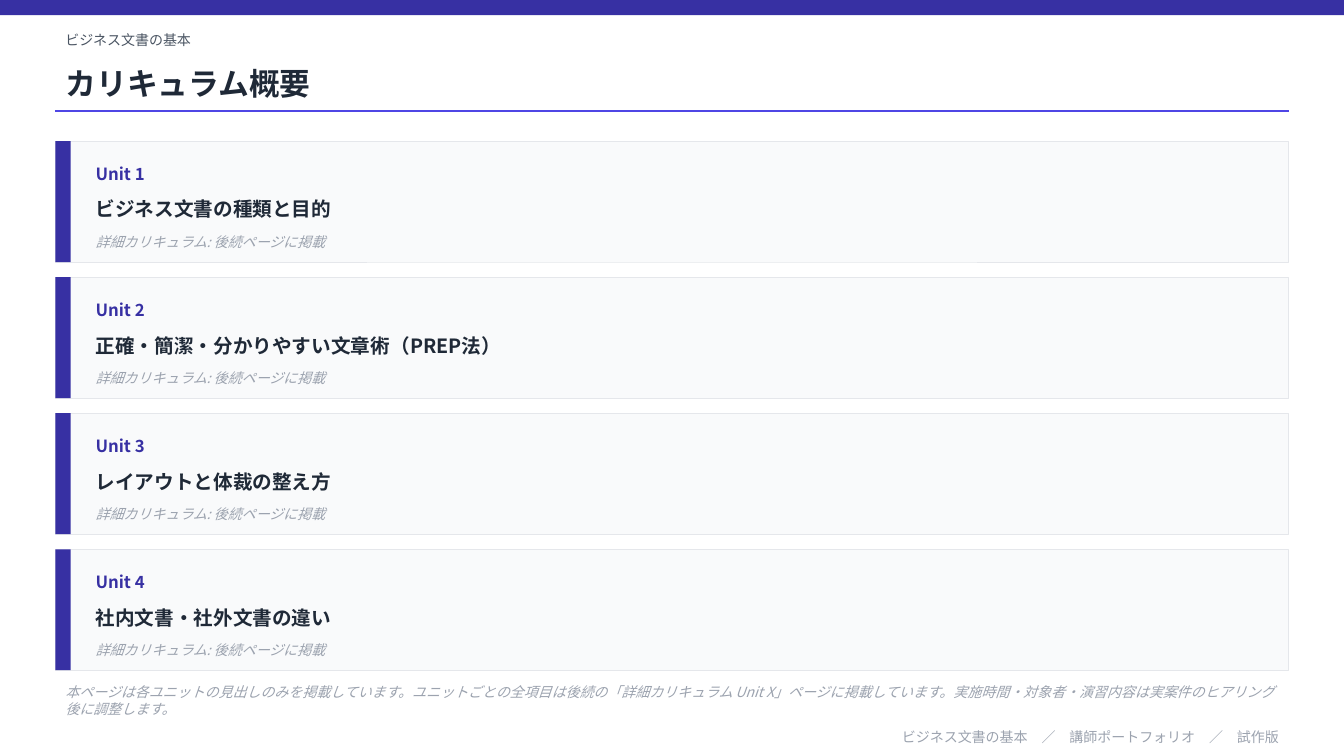
from dataclasses import dataclass

from lxml.etree import SubElement
from pptx import Presentation
from pptx.dml.color import RGBColor
from pptx.enum.shapes import MSO_CONNECTOR as Connector, MSO_SHAPE as Shape
from pptx.enum.text import MSO_ANCHOR as Anchor, MSO_AUTO_SIZE as AutoSize, PP_ALIGN as Align
from pptx.oxml.ns import qn
from pptx.util import Pt


@dataclass(frozen=True)
class Theme:
    font: str = "Noto Sans CJK JP"
    brand: str = "3730A3"
    rule: str = "4F46E5"
    ink: str = "1F2937"
    subtle: str = "4B5563"
    muted: str = "9CA3AF"
    card: str = "F9FAFB"
    border: str = "E5E7EB"
    title: float = 22
    heading: float = 14
    label: float = 12
    small: float = 10


THEME = Theme()
PAGE_WIDTH, PAGE_HEIGHT = 959.76, 540
MARGIN = 39.6
CONTENT_WIDTH = PAGE_WIDTH - 2 * MARGIN
CARD_TOP, CARD_HEIGHT, CARD_GAP = 100.8, 86.4, 10.8

COURSE = "ビジネス文書の基本"
UNITS = [
    "ビジネス文書の種類と目的",
    "正確・簡潔・分かりやすい文章術（PREP法）",
    "レイアウトと体裁の整え方",
    "社内文書・社外文書の違い",
]
DETAIL = "詳細カリキュラム: 後続ページに掲載"
NOTE = (
    "本ページは各ユニットの見出しのみを掲載しています。"
    "ユニットごとの全項目は後続の「詳細カリキュラム Unit X」ページに掲載しています。"
    "実施時間・対象者・演習内容は実案件のヒアリング後に調整します。"
)
FOOTER = f"{COURSE}　／　講師ポートフォリオ　／　試作版"


def write_text(box, text, size=THEME.small, color=THEME.muted, bold=False,
               italic=False, align=Align.LEFT):
    frame = box.text_frame
    frame.word_wrap = True
    frame.auto_size = AutoSize.NONE
    frame.vertical_anchor = Anchor.MIDDLE
    para = frame.paragraphs[0]
    para.alignment = align
    span = para.add_run()
    span.text = text
    font = span.font
    font.name, font.size = THEME.font, Pt(size)
    font.bold, font.italic = bold, italic
    font.color.rgb = RGBColor.from_string(color)
    # East Asian typeface
    SubElement(font._element, qn("a:ea"), typeface=THEME.font)


def add_text(page, left, top, width, height, text, **style):
    box = page.shapes.add_textbox(Pt(left), Pt(top), Pt(width), Pt(height))
    write_text(box, text, **style)


def add_block(page, left, top, width, height, fill, border=None):
    block = page.shapes.add_shape(Shape.RECTANGLE, Pt(left), Pt(top), Pt(width), Pt(height))
    block.shadow.inherit = False
    block.fill.solid()
    block.fill.fore_color.rgb = RGBColor.from_string(fill)
    if border:
        block.line.color.rgb = RGBColor.from_string(border)
        block.line.width = Pt(0.5)
    else:
        block.line.fill.background()


def add_header(page, left, top, width):
    # Course name, slide title and rule
    add_text(page, left, top, width, 21.6, COURSE, color=THEME.subtle)
    title = page.shapes.title
    title.left, title.top = Pt(left), Pt(top + 21.6)
    title.width, title.height = Pt(width), Pt(39.6)
    write_text(title, "カリキュラム概要", size=THEME.title, color=THEME.ink, bold=True)
    rule_top = Pt(top + 61.2)
    rule = page.shapes.add_connector(
        Connector.STRAIGHT, Pt(left), rule_top, Pt(left + width), rule_top)
    rule.line.color.rgb = RGBColor.from_string(THEME.rule)
    rule.line.width = Pt(1)
    SubElement(rule._element.spPr, qn("a:effectLst"))


def add_unit_card(page, left, top, width, height, number, heading):
    # Card with accent bar
    add_block(page, left, top, width, height, THEME.card, THEME.border)
    add_block(page, left, top, 10.8, height, THEME.brand)
    # Label, heading and detail line
    text_left, text_width = left + 21.6, width - 36
    add_text(page, text_left, top + 8.64, 108, 28.8, f"Unit {number}",
             size=THEME.label, color=THEME.brand, bold=True)
    add_text(page, text_left, top + 32.4, text_width, 32.4, heading,
             size=THEME.heading, color=THEME.ink, bold=True)
    add_text(page, text_left, top + 61.2, text_width, 21.6, DETAIL, italic=True)


def add_footer(page, left, top, width):
    # Note and running footer
    add_text(page, left, top, width, 28.8, NOTE, italic=True)
    add_text(page, left, top + 32.4, width, 15.84, FOOTER, align=Align.RIGHT)


def main():
    deck = Presentation()
    deck.slide_width, deck.slide_height = Pt(PAGE_WIDTH), Pt(PAGE_HEIGHT)
    page = deck.slides.add_slide(deck.slide_layouts.get_by_name("Title Only"))
    # Top band
    add_block(page, 0, 0, PAGE_WIDTH, 10.8, THEME.brand)
    add_header(page, MARGIN, 18, CONTENT_WIDTH)
    for index, heading in enumerate(UNITS):
        top = CARD_TOP + index * (CARD_HEIGHT + CARD_GAP)
        add_unit_card(page, MARGIN, top, CONTENT_WIDTH, CARD_HEIGHT, index + 1, heading)
    add_footer(page, MARGIN, 486, CONTENT_WIDTH)
    deck.save("out.pptx")


if __name__ == "__main__":
    main()
